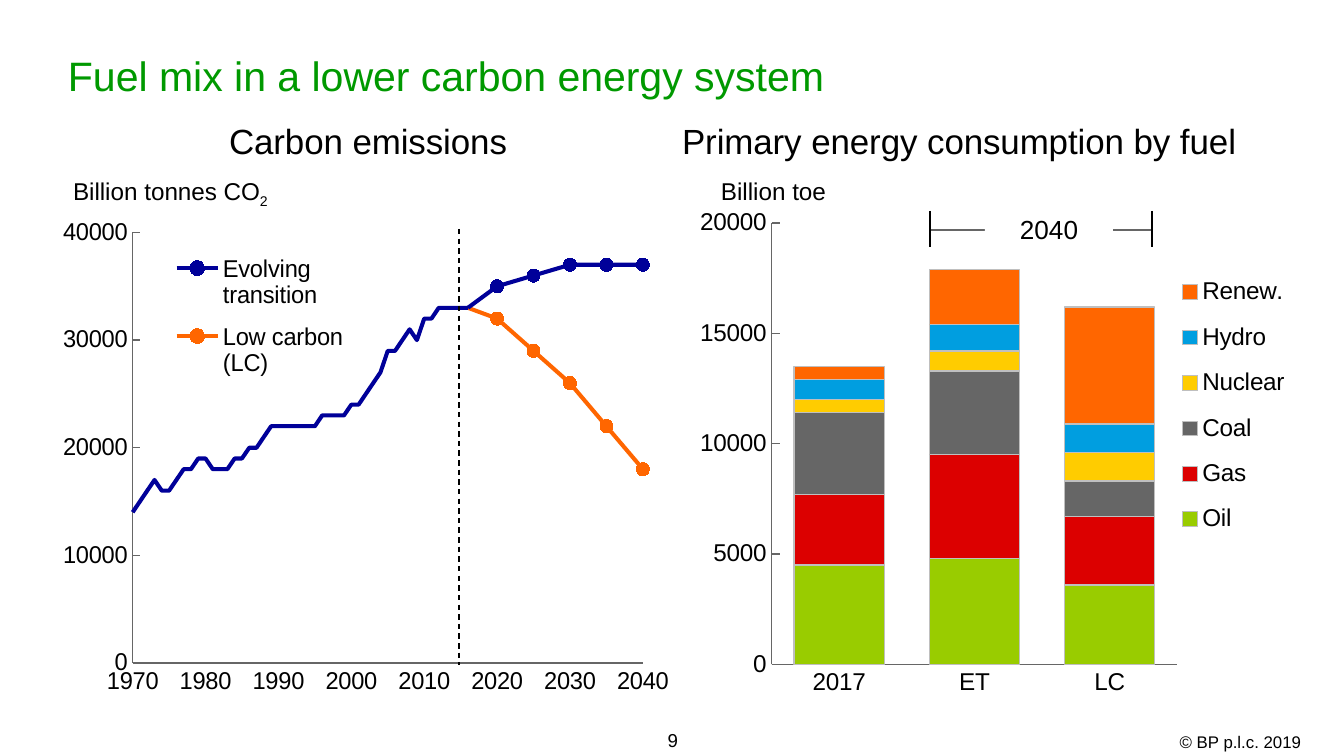
from lxml import etree
from pptx import Presentation
from pptx import util as u
from pptx.chart import data as chart_data
from pptx.dml.color import RGBColor
from pptx.enum import chart as charts, dml, shapes, text
from pptx.oxml import ns, parse_xml

BLACK = RGBColor(0, 0, 0)
WHITE = RGBColor(0xFF, 0xFF, 0xFF)
GREY = RGBColor(0x66, 0x66, 0x66)
SILVER = RGBColor(0xBF, 0xBF, 0xBF)
TITLE_GREEN = RGBColor(0, 0x99, 0)
NAVY = RGBColor(0, 0, 0x99)
ORANGE = RGBColor(0xFF, 0x66, 0)
LIME = RGBColor(0x99, 0xCC, 0)
RED = RGBColor(0xDC, 0, 0)
YELLOW = RGBColor(0xFF, 0xCC, 0)
BLUE = RGBColor(0, 0x9E, 0xE0)

LEFT, CENTER, RIGHT = text.PP_ALIGN.LEFT, text.PP_ALIGN.CENTER, text.PP_ALIGN.RIGHT
SLIDE_WIDTH = u.Inches(10)
SCALE = SLIDE_WIDTH / 1344


def px(*lengths):
    return [u.Emu(round(length * SCALE)) for length in lengths]


def add_text(box, words, size, align=LEFT, inset=(0, 0), color=BLACK):
    shape = slide.shapes.add_textbox(*px(*box))
    frame = shape.text_frame
    frame.word_wrap = True
    frame.margin_left, frame.margin_top = px(*inset)
    frame.margin_right, frame.margin_bottom = px(*inset)
    paragraph = frame.paragraphs[0]
    paragraph.text = words
    paragraph.alignment = align
    paragraph.font.size = u.Pt(size)
    paragraph.font.name = "Arial"
    paragraph.font.color.rgb = color
    return shape


presentation = Presentation()
presentation.slide_width = SLIDE_WIDTH
presentation.slide_height = px(756)[0]
slide = presentation.slides.add_slide(presentation.slide_layouts[6])

# Title and footer
title = add_text((4, 27, 1199, 102), "Fuel mix in a lower carbon energy system", 22, color=TITLE_GREEN)
title.text_frame.margin_left = px(64)[0]
title.text_frame.vertical_anchor = text.MSO_ANCHOR.MIDDLE
title.text_frame.paragraphs[0].line_spacing = 0.9
copyright_line = add_text((1146, 722, 167, 34), "© BP p.l.c. 2019", 9, RIGHT, (12, 6))
copyright_line.text_frame.paragraphs[0].line_spacing = 1.2
add_text((639, 723, 51, 24), "9", 10, RIGHT, (12, 6))

# Carbon emissions: history by year, then two scenarios on the same years
history = [
    14000, 15000, 16000, 17000, 16000, 16000, 17000, 18000, 18000, 19000,
    19000, 18000, 18000, 18000, 19000, 19000, 20000, 20000, 21000, 22000,
    22000, 22000, 22000, 22000, 22000, 22000, 23000, 23000, 23000, 23000,
    24000, 24000, 25000, 26000, 27000, 29000, 29000, 30000, 31000, 30000,
    32000, 32000, 33000, 33000, 33000, 33000, 33000,
]
years = [*range(1970, 2017), *range(2020, 2041, 5)]
scenario_start = years.index(2016)
before = [None] * scenario_start
emission_lines = [
    ("Series 1", history + [None] * 5, NAVY),
    ("Evolving transition", before + [33000, 35000, 36000, 37000, 37000, 37000], NAVY),
    ("Low carbon (LC)", before + [33000, 32000, 29000, 26000, 22000, 18000], ORANGE),
]
emission_data = chart_data.XyChartData()
for name, values, color in emission_lines:
    series = emission_data.add_series(name)
    for year, value in zip(years, values):
        series.add_data_point(year, value)
emissions = slide.shapes.add_chart(
    charts.XL_CHART_TYPE.XY_SCATTER_LINES_NO_MARKERS, *px(63, 205, 637, 520), emission_data).chart
# Years without a value are left out of the plotted points
for point in list(emissions._chartSpace.iter(ns.qn("c:pt"))):
    if point.findtext(ns.qn("c:v")) in ("None", "", None):
        point.getparent().remove(point)
for series, (name, values, color) in zip(emissions.plots[0].series, emission_lines):
    series.smooth = False
    series.format.line.color.rgb = color
    series.format.line.width = u.Pt(2.25)
    if name == "Series 1":
        series.marker.style = charts.XL_MARKER_STYLE.NONE
        continue
    series.marker.style = charts.XL_MARKER_STYLE.CIRCLE
    series.marker.size = 7
    series.marker.format.fill.solid()
    series.marker.format.fill.fore_color.rgb = color
    series.marker.format.line.color.rgb = color
    # The scenarios start unmarked where the history ends
    start = series.points[scenario_start]
    start.marker.style = charts.XL_MARKER_STYLE.NONE
    start.format.line.color.rgb = color
    start.format.line.width = u.Pt(2.25)
emissions.category_axis.minimum_scale = 1970
emissions.category_axis.maximum_scale = 2040
emissions.category_axis.major_unit = 10

# Primary energy by fuel
fuels = [
    ("Oil", (4500, 4800, 3600), LIME),
    ("Gas", (3200, 4700, 3100), RED),
    ("Coal", (3700, 3800, 1600), GREY),
    ("Nuclear", (600, 900, 1300), YELLOW),
    ("Hydro", (900, 1200, 1300), BLUE),
    ("Renew.", (600, 2500, 5300), ORANGE),
]
fuel_data = chart_data.CategoryChartData()
fuel_data.categories = ["2017", "ET", "LC"]
for name, values, color in fuels:
    fuel_data.add_series(name, values)
energy = slide.shapes.add_chart(
    charts.XL_CHART_TYPE.COLUMN_STACKED, *px(689, 186, 626, 571), fuel_data).chart
energy.plots[0].gap_width = 50
energy.plots[0].overlap = 100
for series, (name, values, color) in zip(energy.plots[0].series, fuels):
    series.format.fill.solid()
    series.format.fill.fore_color.rgb = color
    series.format.line.color.rgb = SILVER
    series.format.line.width = u.Pt(0.75)

# Axes, legends and inner layout shared by both charts
chart_styles = [
    (emissions, 40000, 10000, (0.085, 0.053, 0.823, 0.828), (0.14, 0.07, 0.3, 0.29)),
    (energy, 20000, 5000, (0.132, 0.065, 0.648, 0.773), (0.76, 0.13, 0.22, 0.51)),
]
for chart, top, step, plot_box, legend_box in chart_styles:
    chart.has_title = False
    chart.font.size = u.Pt(13)
    chart.font.name = "Arial"
    chart.font.color.rgb = BLACK
    chart.plots[0].vary_by_categories = False
    chart.value_axis.minimum_scale = 0
    chart.value_axis.maximum_scale = top
    chart.value_axis.major_unit = step
    for axis, tick in ((chart.category_axis, charts.XL_TICK_MARK.NONE),
                       (chart.value_axis, charts.XL_TICK_MARK.INSIDE)):
        axis.has_major_gridlines = False
        axis.major_tick_mark = tick
        axis.minor_tick_mark = charts.XL_TICK_MARK.NONE
        axis.tick_labels.number_format = "General"
        axis.tick_labels.number_format_is_linked = False
        axis.tick_labels.font.size = u.Pt(13)
        axis.format.line.color.rgb = GREY
        axis.format.line.width = u.Pt(0.75)
    chart.has_legend = True
    chart.legend.position = charts.XL_LEGEND_POSITION.RIGHT
    chart.legend.include_in_layout = True
    chart.legend.font.size = u.Pt(13)
    plot_area = chart._chartSpace.chart.plotArea
    for parent, box, target in ((plot_area, plot_box, '<c:layoutTarget val="inner"/>'),
                                (chart.legend._element, legend_box, "")):
        for old_layout in parent.findall(ns.qn("c:layout")):
            parent.remove(old_layout)
        modes = "".join(f'<c:{side}Mode val="edge"/>' for side in "xy")
        sizes = "".join(f'<c:{side} val="{value}"/>' for side, value in zip("xywh", box))
        layout = parse_xml(f'<c:layout {ns.nsdecls("c")}><c:manualLayout>{target}{modes}{sizes}'
                           '</c:manualLayout></c:layout>')
        parent.insert(0 if parent is plot_area else 1, layout)

# The history line has no legend entry
emissions.legend._element.insert(1, parse_xml(
    f'<c:legendEntry {ns.nsdecls("c")}><c:idx val="0"/><c:delete val="1"/></c:legendEntry>'))

# Chart headings and units
add_text((-17, 120, 770, 42), "Carbon emissions", 18.66, CENTER)
add_text((574, 120, 770, 42), "Primary energy consumption by fuel", 18.66, CENTER)
unit = add_text((64, 171, 219, 39), "Billion tonnes CO", 13, inset=(9, 5))
subscript = unit.text_frame.paragraphs[0].add_run()
subscript.text = "2"
subscript.font._element.set("baseline", "-25000")
add_text((712, 171, 128, 39), "Billion toe", 13, inset=(9, 5))

# Forecast divider and 2040 bracket
for x1, y1, x2, y2, color, width, dash in [
    (459, 229, 459, 665, BLACK, 0.75, dml.MSO_LINE.DASH),
    (930, 230, 1152, 230, GREY, 0.75, None),
    (1152, 211, 1152, 247, BLACK, 1, None),
    (930, 211, 930, 247, BLACK, 1, None),
]:
    connector = slide.shapes.add_connector(shapes.MSO_CONNECTOR.STRAIGHT, *px(x1, y1, x2, y2))
    connector.line.color.rgb = color
    connector.line.width = u.Pt(width)
    connector.line.dash_style = dash
    etree.SubElement(connector._element.spPr, ns.qn("a:effectLst"))
bracket_label = add_text((985, 206, 128, 46), "2040", 14, CENTER, (13, 7))
bracket_label.fill.solid()
bracket_label.fill.fore_color.rgb = WHITE

presentation.save("out.pptx")
